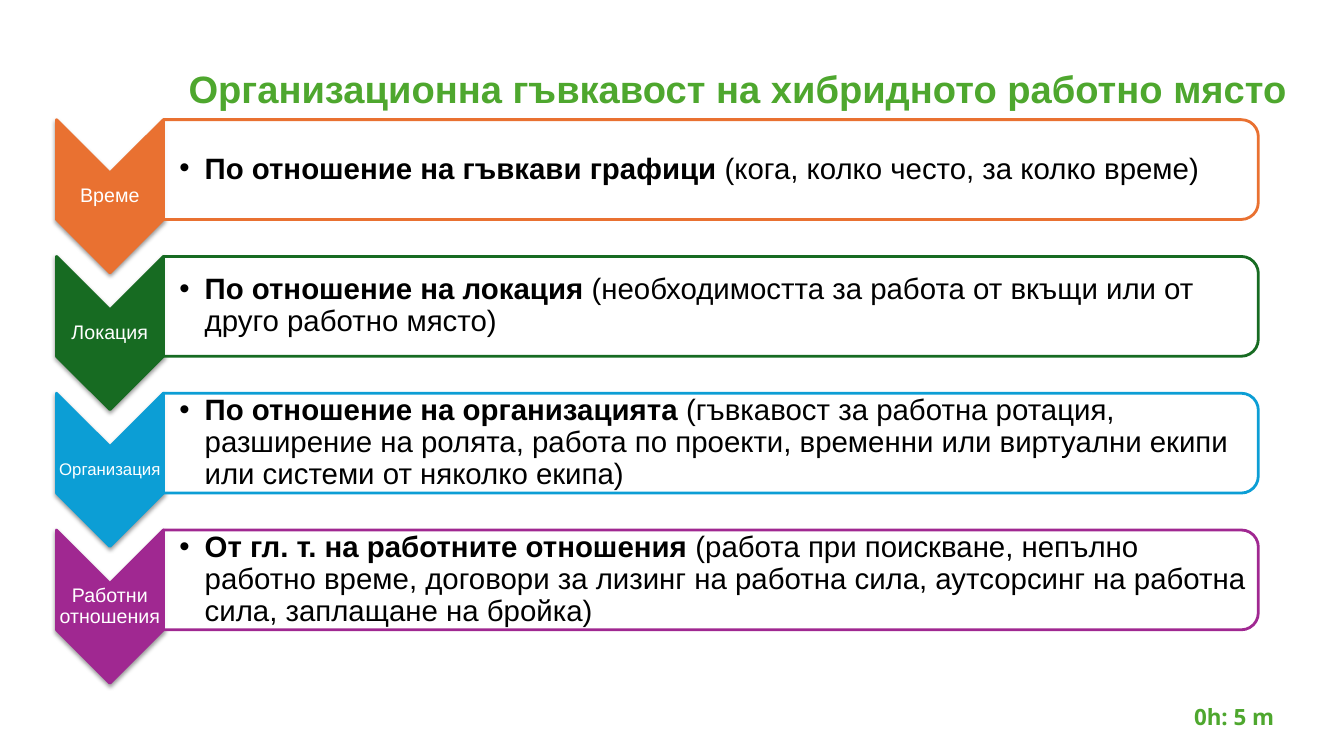
from dataclasses import dataclass

from lxml import etree
from pptx import Presentation
from pptx.dml.color import RGBColor
from pptx.enum.shapes import MSO_SHAPE
from pptx.enum.text import MSO_ANCHOR, MSO_AUTO_SIZE, PP_ALIGN
from pptx.oxml.ns import qn
from pptx.util import Inches, Pt

CHEVRON, ROUND_TOP = MSO_SHAPE.CHEVRON, MSO_SHAPE.ROUND_2_SAME_RECTANGLE
TOP, MIDDLE = MSO_ANCHOR.TOP, MSO_ANCHOR.MIDDLE
LEFT, CENTER = PP_ALIGN.LEFT, PP_ALIGN.CENTER
NO_FIT, GROW = MSO_AUTO_SIZE.NONE, MSO_AUTO_SIZE.SHAPE_TO_FIT_TEXT
COMPARISON = 4
CELL = 0.1


@dataclass(frozen=True)
class Theme:
    font: str = "Arial"
    timer_font: str = "Open Sans"
    green: str = "4EA72E"
    white: str = "FFFFFF"
    black: str = "000000"
    title: float = 27.2
    body: float = 21
    label: float = 14
    small: float = 12
    timer: float = 16
    line: float = 2
    spacing: float = 0.9


def grid(*cells):
    return [Inches(c * CELL) for c in cells]


def add_xml(parent, tag, **attrs):
    el = etree.SubElement(parent, qn(tag))
    for name, value in attrs.items():
        el.set(name, str(value))
    return el


def write(tf, runs, size, color, font, align=LEFT, anchor=MIDDLE, spacing=1.0,
          insets=(0.1, 0.1, 0.1, 0.1), fit=NO_FIT, bullet=False):
    tf.word_wrap = True
    tf.auto_size = fit
    tf.vertical_anchor = anchor
    tf.margin_left, tf.margin_top, tf.margin_right, tf.margin_bottom = grid(*insets)
    p = tf.paragraphs[0]
    p.alignment, p.line_spacing = align, spacing
    p.space_before = p.space_after = Pt(0)
    if bullet:
        pPr = p._p.get_or_add_pPr()
        pPr.set("marL", str(Inches(0.25)))
        pPr.set("indent", str(-Inches(0.25)))
        add_xml(add_xml(pPr, "a:buClr"), "a:srgbClr", val=color)
        add_xml(pPr, "a:buFont", typeface=font)
        add_xml(pPr, "a:buChar", char="•")
    for text, bold in runs:
        r = p.add_run()
        r.text = text
        r.font.name, r.font.size, r.font.bold = font, Pt(size), bold
        r.font.color.rgb = RGBColor.from_string(color)


class Deck:
    def __init__(self, prs, theme):
        self.theme = theme
        self.s = prs.slides.add_slide(prs.slide_layouts[COMPARISON])
        self.title_ph, *self.bodies = self.s.placeholders

    def place(self, ph, box):
        ph.left, ph.top, ph.width, ph.height = grid(*box)
        ph.element.getparent().append(ph.element)
        return ph.text_frame

    def title(self, text, box):
        t = self.theme
        write(self.place(self.title_ph, box), [(text, True)], t.title, t.green, t.font,
              anchor=TOP, spacing=t.spacing, insets=(1, 0, 1, 0))

    def bullet(self, ph, lead, detail, box):
        t = self.theme
        write(self.place(ph, box), [(lead, True), (detail, False)], t.body, t.black,
              t.font, spacing=t.spacing, insets=(1.6, 0.1, 0.1, 0.1), bullet=True)

    def text(self, text, box, size, color, font, bold=False, **fmt):
        sp = self.s.shapes.add_textbox(*grid(*box))
        write(sp.text_frame, [(text, bold)], size, color, font, align=CENTER, **fmt)

    def turned(self, kind, box, fill, line, adjustments):
        x, y, w, h = box
        sp = self.s.shapes.add_shape(kind, *grid(x + (w - h) / 2, y + (h - w) / 2, h, w))
        sp.rotation = 90
        for i, value in enumerate(adjustments):
            sp.adjustments[i] = value
        sp.fill.solid()
        sp.fill.fore_color.rgb = RGBColor.from_string(fill)
        sp.line.color.rgb = RGBColor.from_string(line)
        sp.line.width = Pt(self.theme.line)
        sp.shadow.inherit = False
        return sp.element.spPr

    def chevron(self, box, color):
        spPr = self.turned(CHEVRON, box, color, color, [0.5])
        shadow = add_xml(spPr.find(qn("a:effectLst")), "a:outerShdw", blurRad=Pt(3.1),
                         dist=Pt(1.6), dir=5400000, rotWithShape=0)
        black = add_xml(shadow, "a:srgbClr", val=self.theme.black)
        add_xml(black, "a:alpha", val=38000)

    def frame(self, box, color):
        spPr = self.turned(ROUND_TOP, box, self.theme.white, color, [0.17, 0])
        add_xml(spPr.find(qn("a:solidFill"))[0], "a:alpha", val=90000)


ASPECTS = [
    ("Време", "E97131", "По отношение на гъвкави графици ",
     "(кога, колко често, за колко време)"),
    ("Локация", "176B22", "По отношение на локация ",
     "(необходимостта за работа от вкъщи или от друго работно място)"),
    ("Организация", "0C9ED5", "По отношение на организацията ",
     "(гъвкавост за работна ротация, разширение на ролята, работа по проекти, "
     "временни или виртуални екипи или системи от няколко екипа)"),
    ("Работни отношения", "A02891", "От гл. т. на работните отношения ",
     "(работа при поискване, непълно работно време, договори за лизинг на работна "
     "сила, аутсорсинг на работна сила, заплащане на бройка)"),
]
FIRST_ROW, ROW_STEP = 11.87, 13.57


def main():
    prs = Presentation()
    prs.slide_width, prs.slide_height = Inches(13.33), Inches(7.5)
    t = Theme()
    deck = Deck(prs, t)
    deck.text("0h: 5 m", (115.4, 69.3, 14, 3.7), t.timer, t.green, t.timer_font,
              bold=True, anchor=TOP, insets=(1, 0.5, 1, 0.5), fit=GROW)
    deck.title("Организационна гъвкавост на хибридното работно място",
               (17.7, 7, 114.6, 8))
    for i, (label, color, lead, detail) in enumerate(ASPECTS):
        y = FIRST_ROW + i * ROW_STEP
        size = t.small if label == "Организация" else t.label
        deck.chevron((5.6, y, 10.6, 15.2), color)
        deck.text(label, (5.6, y + 5.3, 10.6, 4.6), size, t.white, t.font,
                  spacing=t.spacing)
        deck.frame((16.2, y, 108.6, 9.9), color)
        deck.bullet(deck.bodies[i], lead, detail, (16.2, y + 0.5, 108.1, 8.9))
    prs.save("out.pptx")


if __name__ == "__main__":
    main()
